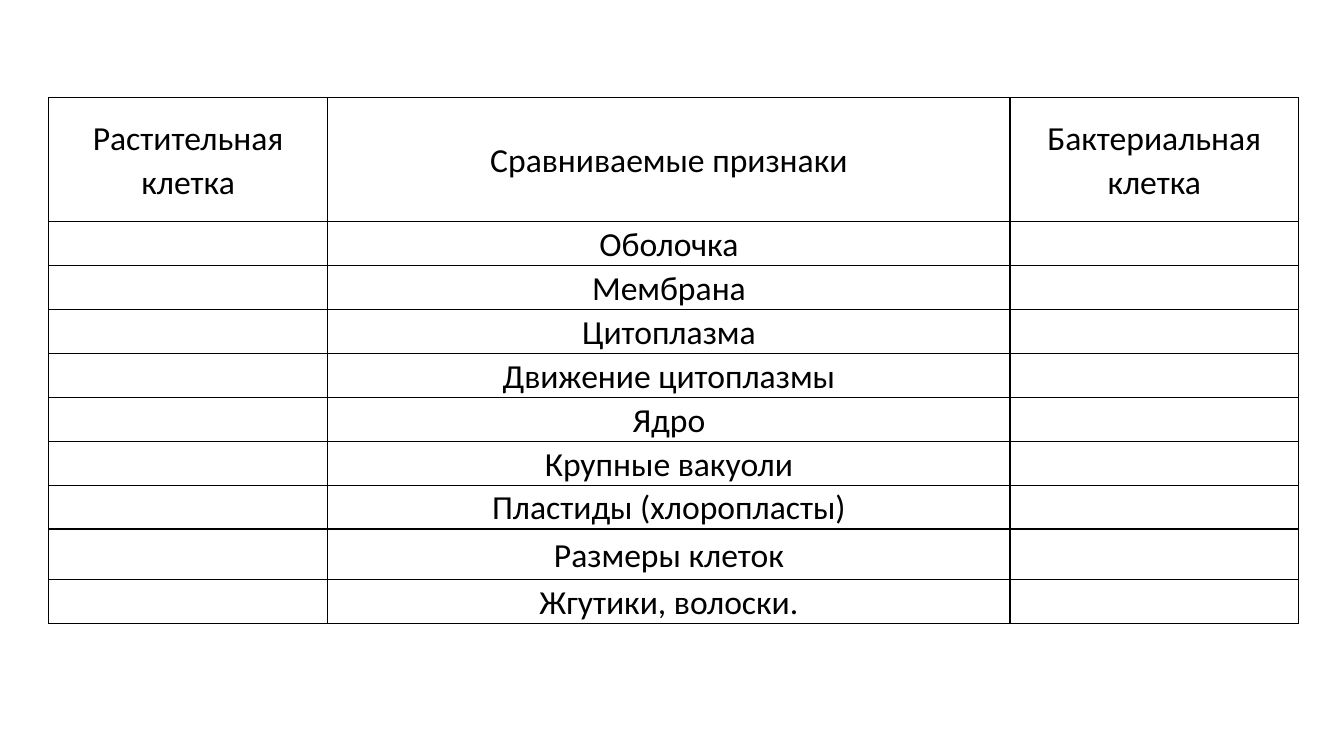
from lxml.etree import SubElement
from pptx import Presentation
from pptx.dml.color import RGBColor
from pptx.enum.text import MSO_ANCHOR, PP_ALIGN
from pptx.oxml.ns import qn
from pptx.util import Inches, Pt

BLACK = RGBColor(0x00, 0x00, 0x00)
FONT = "Calibri"

HEADERS = ["Растительная клетка", "Сравниваемые признаки", "Бактериальная клетка"]
FEATURES = [
    "Оболочка", "Мембрана", "Цитоплазма", "Движение цитоплазмы", "Ядро",
    "Крупные вакуоли", "Пластиды (хлоропласты)", "Размеры клеток",
    "Жгутики, волоски.",
]

# Column shares of the table width; row heights in inches
COL_SHARES = [2.77, 6.76, 2.86]
HEADER_H, ROW_H, TALL_ROW_H = 1.23, 0.43, 0.5
TALL_FEATURE = "Размеры клеток"


def add_borders(cell):
    """Draw a thin solid line on all four sides of a cell."""
    tcPr = cell._tc.get_or_add_tcPr()
    for i, side in enumerate(("lnL", "lnR", "lnT", "lnB")):
        ln = SubElement(tcPr, qn(f"a:{side}"), w=str(Pt(1)))
        tcPr.insert(i, ln)  # lines come before the fill
        fill = SubElement(ln, qn("a:solidFill"))
        SubElement(fill, qn("a:srgbClr"), val=str(BLACK))


def format_cell(cell, text):
    cell.margin_left = cell.margin_right = Inches(0.07)
    cell.margin_top = cell.margin_bottom = 0
    cell.vertical_anchor = MSO_ANCHOR.MIDDLE
    cell.fill.background()
    add_borders(cell)
    p = cell.text_frame.paragraphs[0]
    p.alignment = PP_ALIGN.CENTER
    p.line_spacing = 1.07
    if text:
        r = p.add_run()
        r.text = text
        r.font.name = FONT
        r.font.size = Pt(24)
        r.font.bold = False
        r.font.color.rgb = BLACK


def add_comparison_table(slide, left, top, width):
    rows = [HEADERS] + [["", feature, ""] for feature in FEATURES]
    heights = [HEADER_H] + [TALL_ROW_H if f == TALL_FEATURE else ROW_H
                            for f in FEATURES]
    table = slide.shapes.add_table(
        len(rows), len(HEADERS), Inches(left), Inches(top),
        Inches(width), Inches(sum(heights))).table
    table.first_row = table.horz_banding = False
    for col, share in zip(table.columns, COL_SHARES):
        col.width = Inches(width * share / sum(COL_SHARES))
    for i, (height, texts) in enumerate(zip(heights, rows)):
        table.rows[i].height = Inches(height)
        for j, text in enumerate(texts):
            format_cell(table.cell(i, j), text)


def main():
    prs = Presentation()
    prs.slide_width, prs.slide_height = Inches(13.33), Inches(7.5)
    s = prs.slides.add_slide(prs.slide_layouts[6])  # blank layout
    add_comparison_table(s, 0.48, 0.97, 12.4)
    prs.save("out.pptx")


if __name__ == "__main__":
    main()
